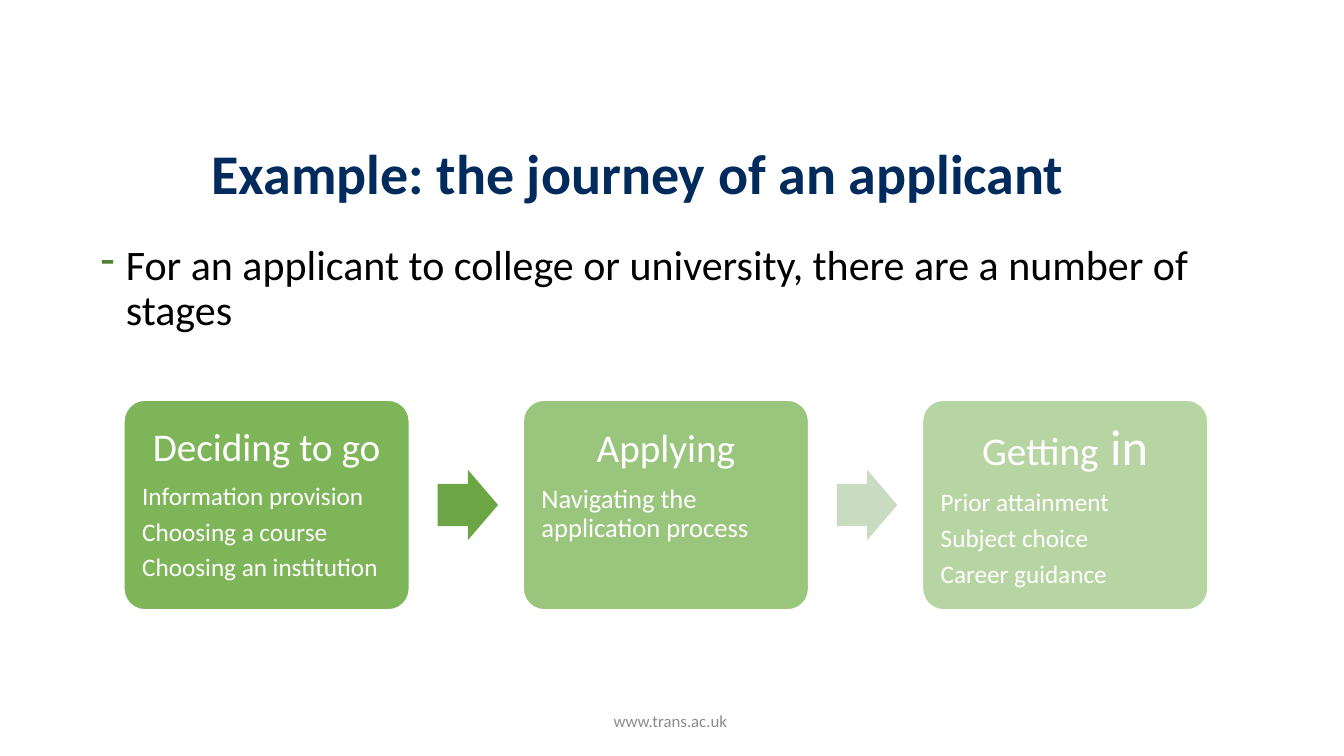
from dataclasses import dataclass

import pptx
import pptx.dml.color
import pptx.enum.shapes
import pptx.enum.text
import pptx.oxml
import pptx.oxml.ns
import pptx.util
from pptx.util import Inches

COLORS = {
    "navy": "002B5C", "black": "000000", "white": "FFFFFF", "grey": "8C8C8C",
    "green": "70AD47", "bullet": "548235",
}
SHAPES = pptx.enum.shapes.MSO_SHAPE
ALIGN = pptx.enum.text.PP_ALIGN
MIDDLE = pptx.enum.text.MSO_ANCHOR.MIDDLE
LINE_SPACING = 0.9
STAGE_LEFT, STAGE_PITCH = 1.23, 3.96
ARROW_OFFSET = 3.11


@dataclass
class Run:
    text: str
    size: int
    color: str = "white"
    bold: bool = False


@dataclass
class Stage:
    heading: list[Run]
    steps: list[str]
    step_size: int
    opacity: int
    arrow: str = ""
    bottom_inset: float = 0.12


STAGES = [
    Stage([Run("Deciding to go", 28)],
          ["Information provision", "Choosing a course", "Choosing an institution"],
          18, 90, "6BA544"),
    Stage([Run("Applying", 28)], ["Navigating the application process"],
          19, 70, "C9DBC1", 0.5),
    Stage([Run("Getting", 28), Run(" in", 36)],
          ["Prior attainment", "Subject choice", "Career guidance"], 18, 50),
]


def rgb(value: str) -> pptx.dml.color.RGBColor:
    return pptx.dml.color.RGBColor.from_string(value)


def set_attributes(target, values: dict) -> None:
    for name, value in values.items():
        setattr(target, name, value)


def write_paragraph(p, runs: list[Run], **formats) -> None:
    set_attributes(p, formats)
    for run in runs:
        r = p.add_run()
        r.text = run.text
        set_attributes(r.font, {"name": "Calibri", "size": pptx.util.Pt(run.size),
                                "bold": run.bold})
        r.font.color.rgb = rgb(COLORS[run.color])


def add_text(s, box: tuple, run: Run, anchor=None, **formats):
    tf = s.shapes.add_textbox(*map(Inches, box)).text_frame
    set_attributes(tf, {"word_wrap": True, "vertical_anchor": anchor})
    write_paragraph(tf.paragraphs[0], [run], **formats)
    return tf.paragraphs[0]


def add_bullet(p, char: str, color: str, indent: float) -> None:
    """Give the paragraph a hanging, coloured bullet character."""
    pPr = p._p.get_or_add_pPr()
    pPr.set("marL", str(Inches(indent)))
    pPr.set("indent", str(Inches(-indent)))
    ns = pptx.oxml.ns.nsdecls("a")
    for xml in (f'<a:buClr {ns}><a:srgbClr val="{color}"/></a:buClr>',
                f'<a:buChar {ns} char="{char}"/>'):
        pPr.append(pptx.oxml.parse_xml(xml))


def add_filled(s, kind, box: tuple, adjustments: list[float], color: str):
    sp = s.shapes.add_shape(kind, *map(Inches, box))
    sp.shadow.inherit = False
    for i, value in enumerate(adjustments):
        sp.adjustments[i] = value
    sp.fill.solid()
    sp.fill.fore_color.rgb = rgb(color)
    sp.line.fill.background()
    return sp


def set_opacity(sp, percent: int) -> None:
    clr = sp._element.spPr.find(".//" + pptx.oxml.ns.qn("a:srgbClr"))
    ns = pptx.oxml.ns.nsdecls("a")
    clr.append(pptx.oxml.parse_xml(f'<a:alpha {ns} val="{percent * 1000}"/>'))


def add_stage(s, stage: Stage, left: float) -> None:
    sp = add_filled(s, SHAPES.ROUNDED_RECTANGLE, (left, 3.97, 2.83, 2.08), [0.1],
                    COLORS["green"])
    set_opacity(sp, stage.opacity)
    sp.line.color.rgb = rgb(COLORS["white"])
    sp.line.width = pptx.util.Pt(1)

    tf = sp.text_frame
    inset = Inches(0.12)
    set_attributes(tf, {
        "word_wrap": True, "vertical_anchor": MIDDLE, "margin_left": inset,
        "margin_right": inset, "margin_top": inset,
        "margin_bottom": Inches(stage.bottom_inset),
    })
    write_paragraph(tf.paragraphs[0], stage.heading, alignment=ALIGN.CENTER,
                    line_spacing=LINE_SPACING, space_after=pptx.util.Pt(10))
    for step in stage.steps:
        write_paragraph(tf.add_paragraph(), [Run(step, stage.step_size)],
                        alignment=ALIGN.LEFT, line_spacing=LINE_SPACING,
                        space_after=pptx.util.Pt(6))
    if stage.arrow:
        add_filled(s, SHAPES.RIGHT_ARROW, (left + ARROW_OFFSET, 4.66, 0.6, 0.7),
                   [0.6, 0.5], stage.arrow)


def main() -> None:
    prs = pptx.Presentation()
    prs.slide_width, prs.slide_height = Inches(13.33), Inches(7.5)
    s = prs.slides.add_slide(prs.slide_layouts[6])

    intro = add_text(
        s, (0.9, 2.37, 11.65, 4.95),
        Run("For an applicant to college or university, there are a number of stages",
            30, "black"), line_spacing=LINE_SPACING)
    add_bullet(intro, "-", COLORS["bullet"], 0.25)
    add_text(s, (2, 1.12, 9.75, 1.25),
             Run("Example: the journey of an applicant", 40, "navy", True),
             MIDDLE, line_spacing=LINE_SPACING)
    for i, stage in enumerate(STAGES):
        add_stage(s, stage, STAGE_LEFT + i * STAGE_PITCH)
    add_text(s, (4.4, 6.95, 4.5, 0.4), Run("www.trans.ac.uk", 12, "grey"),
             MIDDLE, alignment=ALIGN.CENTER)
    prs.save("out.pptx")


if __name__ == "__main__":
    main()
